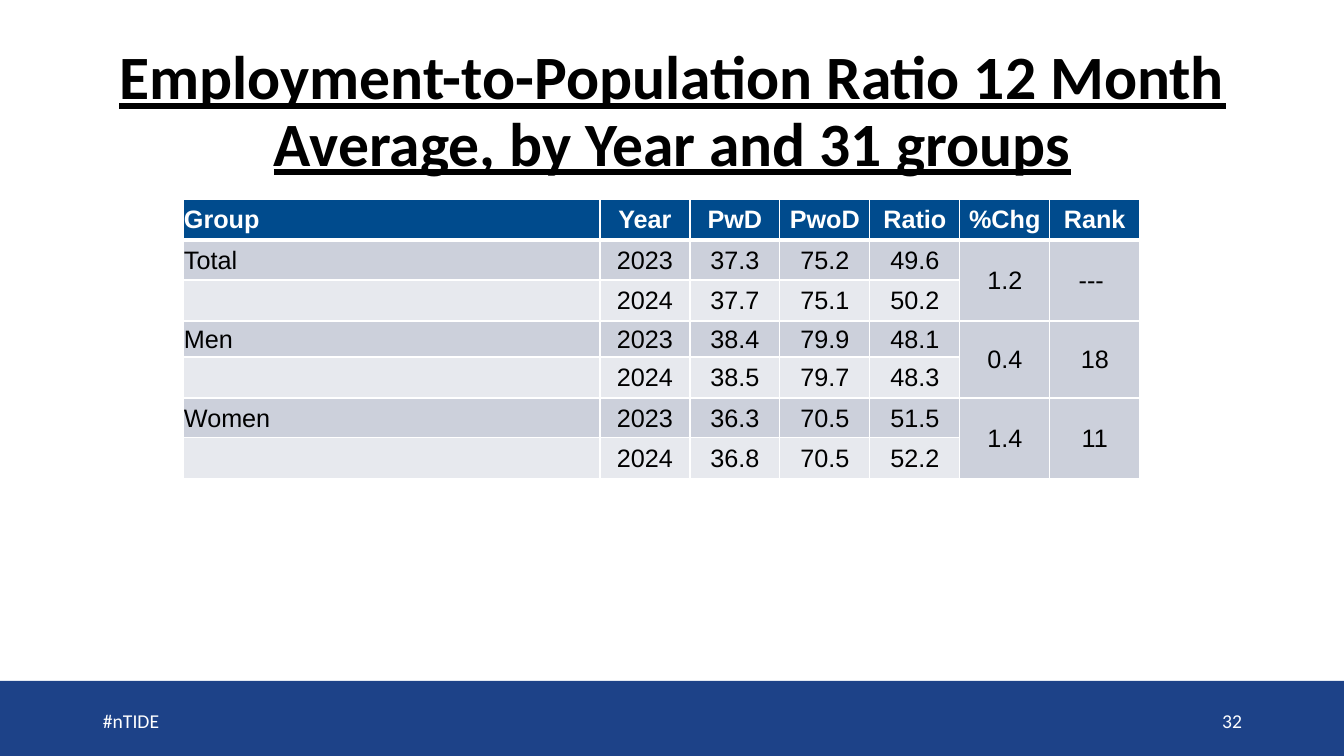
from lxml import etree
from pptx import Presentation
from pptx.dml.color import RGBColor
from pptx.enum.shapes import MSO_SHAPE
from pptx.enum.text import MSO_ANCHOR, MSO_AUTO_SIZE, PP_ALIGN
from pptx.oxml.ns import qn
from pptx.util import Emu, Pt

LEFT, CENTER, RIGHT = PP_ALIGN.LEFT, PP_ALIGN.CENTER, PP_ALIGN.RIGHT
MIDDLE = MSO_ANCHOR.MIDDLE
RECTANGLE = MSO_SHAPE.RECTANGLE
NO_AUTOFIT = MSO_AUTO_SIZE.NONE

WHITE = RGBColor(0xFF, 0xFF, 0xFF)
BLACK = RGBColor(0x00, 0x00, 0x00)
FOOTER_BLUE = RGBColor(0x1D, 0x42, 0x88)
HEADER_BLUE = RGBColor(0x00, 0x4B, 0x8D)
BAND_DARK = RGBColor(0xCC, 0xD0, 0xDB)
BAND_LIGHT = RGBColor(0xE7, 0xE9, 0xEE)

SCALE = 914400 / 100.8


def px(length):
    return Emu(round(length * SCALE))


def add_borders(cell, bottom_width):
    properties = cell._tc.get_or_add_tcPr()
    for side, width in (("lnL", 1), ("lnR", 1), ("lnT", 1), ("lnB", bottom_width)):
        line = etree.SubElement(properties, qn(f"a:{side}"), w=str(Pt(width)))
        fill = etree.SubElement(line, qn("a:solidFill"))
        etree.SubElement(fill, qn("a:srgbClr"), val=str(WHITE))


deck = Presentation()
deck.slide_width, deck.slide_height = px(1344), px(756)
page = deck.slides.add_slide(deck.slide_layouts[5])

# Footer band
band = page.shapes.add_shape(RECTANGLE, 0, px(681), px(1344), px(75))
band.shadow.inherit = False
band.fill.solid()
band.fill.fore_color.rgb = FOOTER_BLUE
band.line.fill.background()

# Title
title = page.shapes.title
title.left, title.top, title.width, title.height = px(93), px(40), px(1159), px(146)
title.text_frame.auto_size = NO_AUTOFIT
title.text_frame.vertical_anchor = MIDDLE
title.text_frame.text = "Employment-to-Population Ratio 12 Month Average, by Year and 31 groups"
para = title.text_frame.paragraphs[0]
para.alignment = CENTER
para.line_spacing = 0.9
para.font.name, para.font.size = "Calibri", Pt(44)
para.font.bold = para.font.underline = True
para.font.color.rgb = BLACK

# Footer texts
for text, left, alignment in (("#nTIDE", 93, LEFT), ("32", 950, RIGHT)):
    box = page.shapes.add_textbox(px(left), px(701), px(302), px(40))
    box.text_frame.word_wrap = True
    box.text_frame.vertical_anchor = MIDDLE
    box.text_frame.text = text
    para = box.text_frame.paragraphs[0]
    para.alignment = alignment
    para.font.name, para.font.size = "Calibri", Pt(14)
    para.font.color.rgb = WHITE

# Employment table
ROWS = [
    ("Group", "Year", "PwD", "PwoD", "Ratio", "%Chg", "Rank"),
    ("Total", "2023", "37.3", "75.2", "49.6", "1.2", "--- "),
    ("", "2024", "37.7", "75.1", "50.2", "", ""),
    ("Men", "2023", "38.4", "79.9", "48.1", "0.4", "18"),
    ("", "2024", "38.5", "79.7", "48.3", "", ""),
    ("Women", "2023", "36.3", "70.5", "51.5", "1.4", "11"),
    ("", "2024", "36.8", "70.5", "52.2", "", ""),
]
COLUMN_WIDTHS = [417] + [90] * 6
ROW_HEIGHTS = [41, 40, 41, 36, 41, 40, 41]

table = page.shapes.add_table(
    len(ROWS), len(COLUMN_WIDTHS), px(183), px(199),
    px(sum(COLUMN_WIDTHS)), px(sum(ROW_HEIGHTS)),
).table
for column, width in zip(table.columns, COLUMN_WIDTHS):
    column.width = px(width)
for row, height in zip(table.rows, ROW_HEIGHTS):
    row.height = px(height)

for row_index, values in enumerate(ROWS):
    is_header = row_index == 0
    band_color = BAND_DARK if row_index % 2 else BAND_LIGHT
    for column_index, value in enumerate(values):
        cell = table.cell(row_index, column_index)
        add_borders(cell, 3 if is_header else 1)
        cell.fill.solid()
        cell.fill.fore_color.rgb = HEADER_BLUE if is_header else band_color
        cell.vertical_anchor = MIDDLE
        cell.margin_left = cell.margin_right = cell.margin_top = px(1)
        cell.margin_bottom = 0
        cell.text = value
        para = cell.text_frame.paragraphs[0]
        para.alignment = CENTER if column_index else LEFT
        para.font.name, para.font.size = "Arial", Pt(18)
        para.font.bold = is_header
        para.font.color.rgb = WHITE if is_header else BLACK

# Change and rank span both years of a group
for row_index in range(1, len(ROWS), 2):
    for column_index in (5, 6):
        table.cell(row_index, column_index).merge(table.cell(row_index + 1, column_index))

deck.save("out.pptx")
